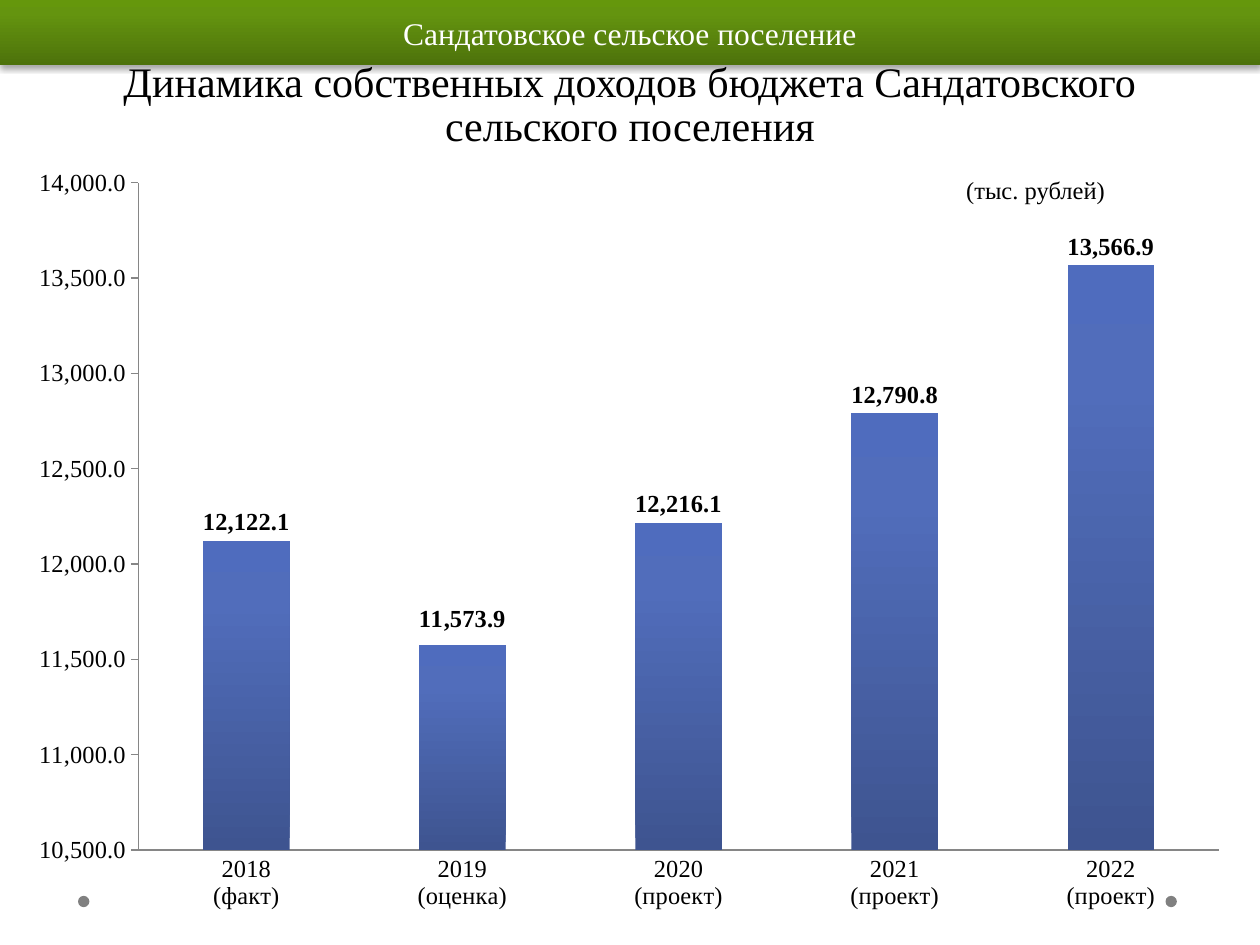
from lxml import etree
from pptx import Presentation
from pptx.chart import data
from pptx.dml.color import RGBColor
from pptx.enum import chart as charts, shapes, text
from pptx.oxml import parse_xml
from pptx.oxml.ns import nsdecls, qn
from pptx.util import Pt

BLACK = RGBColor(0, 0, 0)
WHITE = RGBColor(255, 255, 255)
GRAY = RGBColor(0x80, 0x80, 0x80)
AXIS_GRAY = RGBColor(0x86, 0x86, 0x86)
GREENS = [(0, RGBColor(0x4D, 0x72, 0x0B)), (80, RGBColor(0x64, 0x94, 0x0F)),
          (100, RGBColor(0x65, 0x97, 0x0C))]
BLUES = [(0, RGBColor(0x3E, 0x54, 0x90)), (80, RGBColor(0x51, 0x6D, 0xBB)),
         (100, RGBColor(0x4F, 0x6C, 0xBE))]
FONT = "Times New Roman"
NUMBER_FORMAT = "#,##0.0"

HEADER = "Сандатовское сельское поселение"
TITLE = "Динамика собственных доходов бюджета Сандатовского сельского поселения"
UNITS = "(тыс. рублей)"
INCOME = [
    ("2018", "(факт)", 12122.1),
    ("2019", "(оценка)", 11573.9),
    ("2020", "(проект)", 12216.1),
    ("2021", "(проект)", 12790.8),
    ("2022", "(проект)", 13566.9),
]
RAISED_LABEL = 1
PLOT = {"x": 0.08, "y": 0.02, "w": 0.92, "h": 0.88}
DOT_LEFTS = (44.6, 666)


def apply(target, **values):
    for name, value in values.items():
        setattr(target, name, value)


def set_font(font, size, color=BLACK, bold=False):
    apply(font, name=FONT, size=Pt(size), bold=bold)
    font.color.rgb = color


def write(shape, words, size, color=BLACK, align=None, anchor=None, spacing=None):
    frame = shape.text_frame
    apply(frame, word_wrap=True, vertical_anchor=anchor)
    para = frame.paragraphs[0]
    apply(para, alignment=align, line_spacing=spacing)
    span = para.add_run()
    span.text = words
    set_font(span.font, size, color)


def add_text(page, frame, *args, **options):
    box = page.shapes.add_textbox(*map(Pt, frame))
    write(box, *args, **options)


def add_shape(page, kind, frame):
    shape = page.shapes.add_shape(kind, *map(Pt, frame))
    shape.shadow.inherit = False
    shape.line.fill.background()
    return shape


def fill_upward(fill, stops):
    fill.gradient()
    fill.gradient_angle = 90
    grad = fill._xPr.find(qn("a:gradFill"))
    colors = "".join(
        f'<a:gs pos="{at * 1000}"><a:srgbClr val="{color}"/></a:gs>' for at, color in stops)
    grad.replace(grad.find(qn("a:gsLst")),
                 parse_xml(f'<a:gsLst {nsdecls("a")}>{colors}</a:gsLst>'))
    grad.find(qn("a:lin")).set("ang", "16200000")


def add_shadow(shape):
    effects = shape._element.spPr.find(qn("a:effectLst"))
    effects.append(parse_xml(
        f'<a:outerShdw {nsdecls("a")} blurRad="{Pt(3.1)}" dist="{Pt(1.8)}" dir="5400000">'
        '<a:srgbClr val="000000"><a:alpha val="35000"/></a:srgbClr></a:outerShdw>'))


def make_layout(places, inner=False):
    layout = etree.Element(qn("c:layout"))
    manual = etree.SubElement(layout, qn("c:manualLayout"))
    modes = {"layoutTarget": "inner", "xMode": "edge", "yMode": "edge"} if inner else {}
    for name, value in {**modes, **places}.items():
        etree.SubElement(manual, qn(f"c:{name}")).set("val", str(value))
    return layout


def add_income_chart(page):
    source = data.CategoryChartData(number_format=NUMBER_FORMAT)
    source.categories = [f"{year}\n{status}" for year, status, _ in INCOME]
    source.add_series("Доходы", [value for _, _, value in INCOME])
    chart = page.shapes.add_chart(
        charts.XL_CHART_TYPE.COLUMN_CLUSTERED, *map(Pt, (22.3, 95.8, 674.6, 433.4)), source).chart
    apply(chart, has_legend=False, has_title=False)
    set_font(chart.font, 14)

    ticks = charts.XL_TICK_MARK
    apply(chart.category_axis, major_tick_mark=ticks.NONE)
    apply(chart.value_axis, major_tick_mark=ticks.OUTSIDE, has_major_gridlines=False,
          minimum_scale=10500, maximum_scale=14000, major_unit=500)
    apply(chart.value_axis.tick_labels, number_format=NUMBER_FORMAT,
          number_format_is_linked=False)
    for axis in (chart.category_axis, chart.value_axis):
        set_font(axis.tick_labels.font, 14)
        axis.format.line.color.rgb = AXIS_GRAY
        axis.format.line.width = Pt(0.75)

    area = chart._chartSpace.chart.plotArea
    for old in area.findall(qn("c:layout")):
        area.remove(old)
    area.insert(0, make_layout(PLOT, inner=True))

    plot = chart.plots[0]
    apply(plot, gap_width=150, vary_by_categories=False)
    series = plot.series[0]
    fill_upward(series.format.fill, BLUES)
    labels = series.data_labels
    apply(labels, show_value=True, number_format=NUMBER_FORMAT, number_format_is_linked=False,
          position=charts.XL_LABEL_POSITION.OUTSIDE_END)
    set_font(labels.font, 14, bold=True)

    raised = series.points[RAISED_LABEL].data_label
    set_font(raised.font, 14, bold=True)
    raised.position = charts.XL_LABEL_POSITION.OUTSIDE_END
    labels._element.find(qn("c:dLbl")).insert(1, make_layout({"x": 0, "y": -0.01}))


def main():
    deck = Presentation()
    apply(deck, slide_width=Pt(720), slide_height=Pt(540))
    page = deck.slides.add_slide(deck.slide_layouts[6])
    center = text.PP_ALIGN.CENTER

    for left in DOT_LEFTS:
        dot = add_shape(page, shapes.MSO_SHAPE.OVAL, (left, 511.9, 6.5, 6.5))
        dot.fill.solid()
        dot.fill.fore_color.rgb = GRAY

    add_text(page, (36, 51.8, 648, 37.4), TITLE, 24, align=center,
             anchor=text.MSO_ANCHOR.BOTTOM, spacing=Pt(25))
    add_income_chart(page)
    add_text(page, (545, 96.5, 106.6, 23.8), UNITS, 14)

    band = add_shape(page, shapes.MSO_SHAPE.RECTANGLE, (0, 0, 720, 37.4))
    fill_upward(band.fill, GREENS)
    add_shadow(band)
    write(band, HEADER, 18, WHITE, center, text.MSO_ANCHOR.MIDDLE)
    deck.save("out.pptx")


if __name__ == "__main__":
    main()
